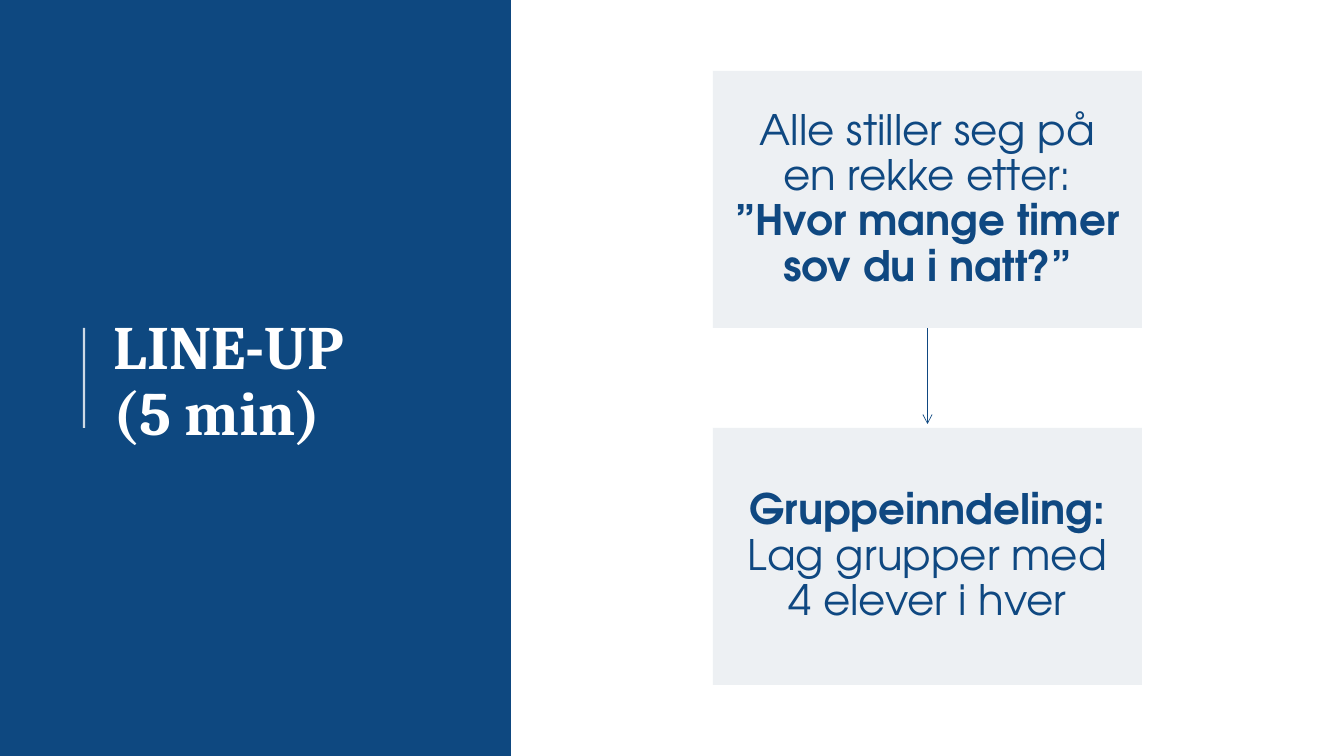
from lxml import etree
from pptx import Presentation
from pptx.dml.color import RGBColor
from pptx.enum.shapes import MSO_CONNECTOR, MSO_SHAPE
from pptx.enum.text import MSO_ANCHOR, PP_ALIGN
from pptx.oxml.ns import qn
from pptx.util import Pt

PX = 12192000 / 1344
NAVY = RGBColor(0x0E, 0x48, 0x80)
BLUE = RGBColor(0x0F, 0x48, 0x81)
PALE = RGBColor(0xED, 0xF0, 0xF3)
WHITE = RGBColor(0xFF, 0xFF, 0xFF)
RECT = MSO_SHAPE.RECTANGLE
STRAIGHT = MSO_CONNECTOR.STRAIGHT
MIDDLE = MSO_ANCHOR.MIDDLE
CENTER = PP_ALIGN.CENTER

STEPS = [
    [("Alle stiller seg på en rekke etter: ", False),
     ("”Hvor mange timer sov du i natt?”", True)],
    [("Gruppeinndeling:", True),
     (" Lag grupper med 4 elever i hver", False)],
]


def px(*lengths):
    return [round(n * PX) for n in lengths]


def add_rect(s, x, y, w, h, color):
    sp = s.shapes.add_shape(RECT, *px(x, y, w, h))
    sp.shadow.inherit = False
    sp.fill.solid()
    sp.fill.fore_color.rgb = color
    sp.line.fill.background()
    return sp


def add_line(s, x, top, bottom, color, width):
    """Draw a vertical line without shadow and return its connector."""
    line = s.shapes.add_connector(STRAIGHT, *px(x, top, x, bottom))
    line.line.color.rgb = color
    line.line.width = Pt(width)
    etree.SubElement(line._element.spPr, qn("a:effectLst"))
    return line


def set_font(p, name, size, color):
    p.line_spacing = 0.9
    p.font.name = name
    p.font.size = Pt(size)
    p.font.color.rgb = color


def add_title_panel(s, x, y, w, h):
    add_rect(s, x, y, w, h, NAVY)
    rule = add_line(s, x + 84, y + 328, y + 428, WHITE, 1.5)
    white = rule.line._ln.find(".//" + qn("a:srgbClr"))
    etree.SubElement(white, qn("a:alpha"), val="80000")

    title = s.shapes.add_textbox(*px(x + 104, y + 79, w - 139, h - 149))
    tf = title.text_frame
    tf.word_wrap = True
    tf.vertical_anchor = MIDDLE
    p = tf.paragraphs[0]
    p.text = "LINE-UP\v(5 min)"
    set_font(p, "Cambria", 44, WHITE)
    p.font.bold = True


def add_step(s, x, y, w, h, runs):
    tf = add_rect(s, x, y, w, h, PALE).text_frame
    tf.word_wrap = True
    tf.vertical_anchor = MIDDLE
    tf.margin_left, tf.margin_top, tf.margin_right, tf.margin_bottom = px(21, 22, 21, 22)
    p = tf.paragraphs[0]
    p.alignment = CENTER
    set_font(p, "TeX Gyre Adventor", 30, BLUE)
    for text, bold in runs:
        r = p.add_run()
        r.text = text
        r.font.bold = bold


def add_flow(s, x, y, w, h, steps):
    """Stack the steps in the box, with an arrow in each gap."""
    step_h = 257
    pitch = (h - step_h) / (len(steps) - 1)
    for i, runs in enumerate(steps):
        top = y + i * pitch
        add_step(s, x, top, w, step_h, runs)
        if i:
            arrow = add_line(s, x + w / 2, top - pitch + step_h, top - 4, BLUE, 0.5)
            etree.SubElement(arrow.line._ln, qn("a:tailEnd"), type="arrow")


def main():
    prs = Presentation()
    prs.slide_width, prs.slide_height = px(1344, 756)
    s = prs.slides.add_slide(prs.slide_layouts[6])
    add_title_panel(s, 0, 0, 511, 756)
    add_flow(s, 713, 71, 429, 614, STEPS)
    prs.save("out.pptx")


if __name__ == "__main__":
    main()
